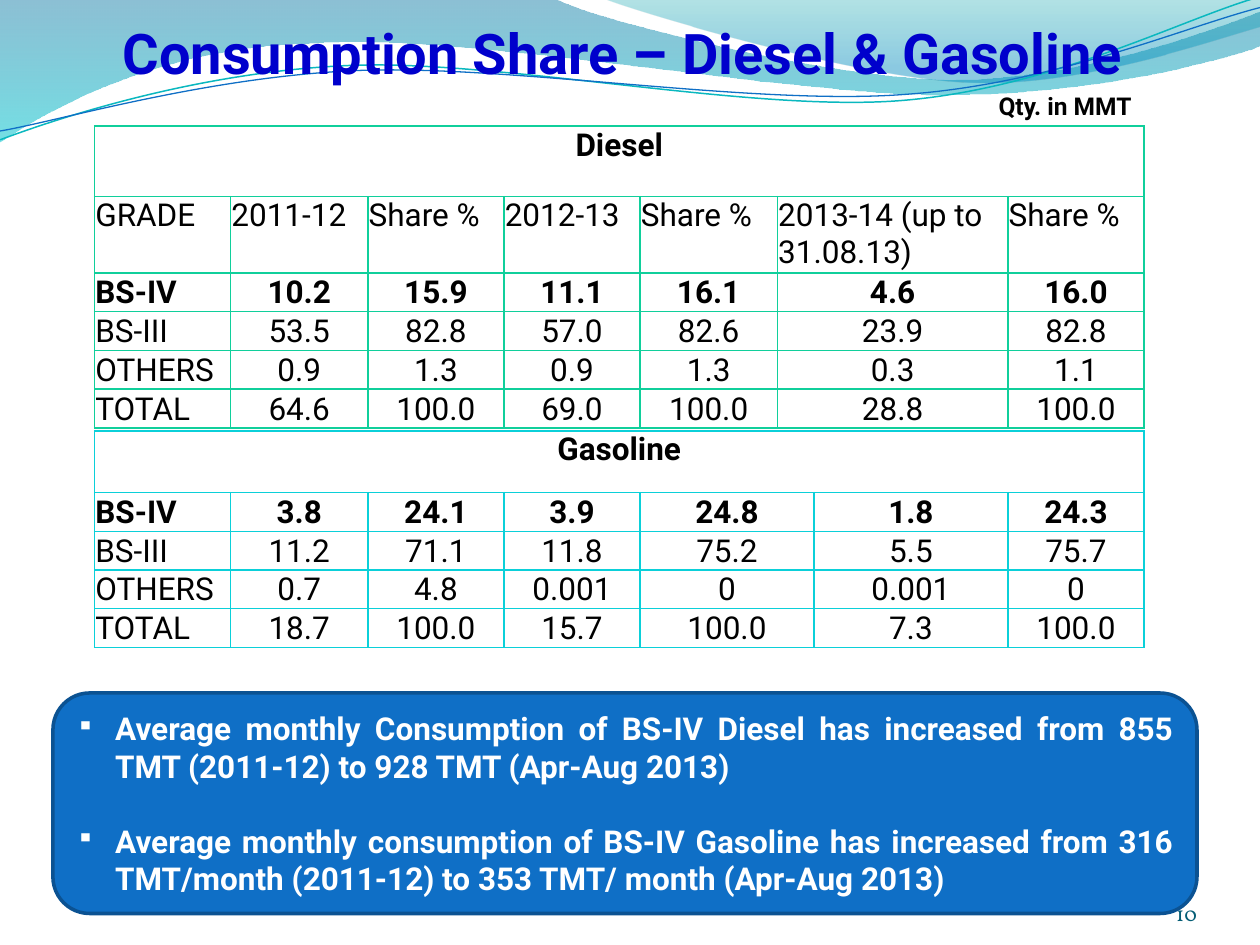
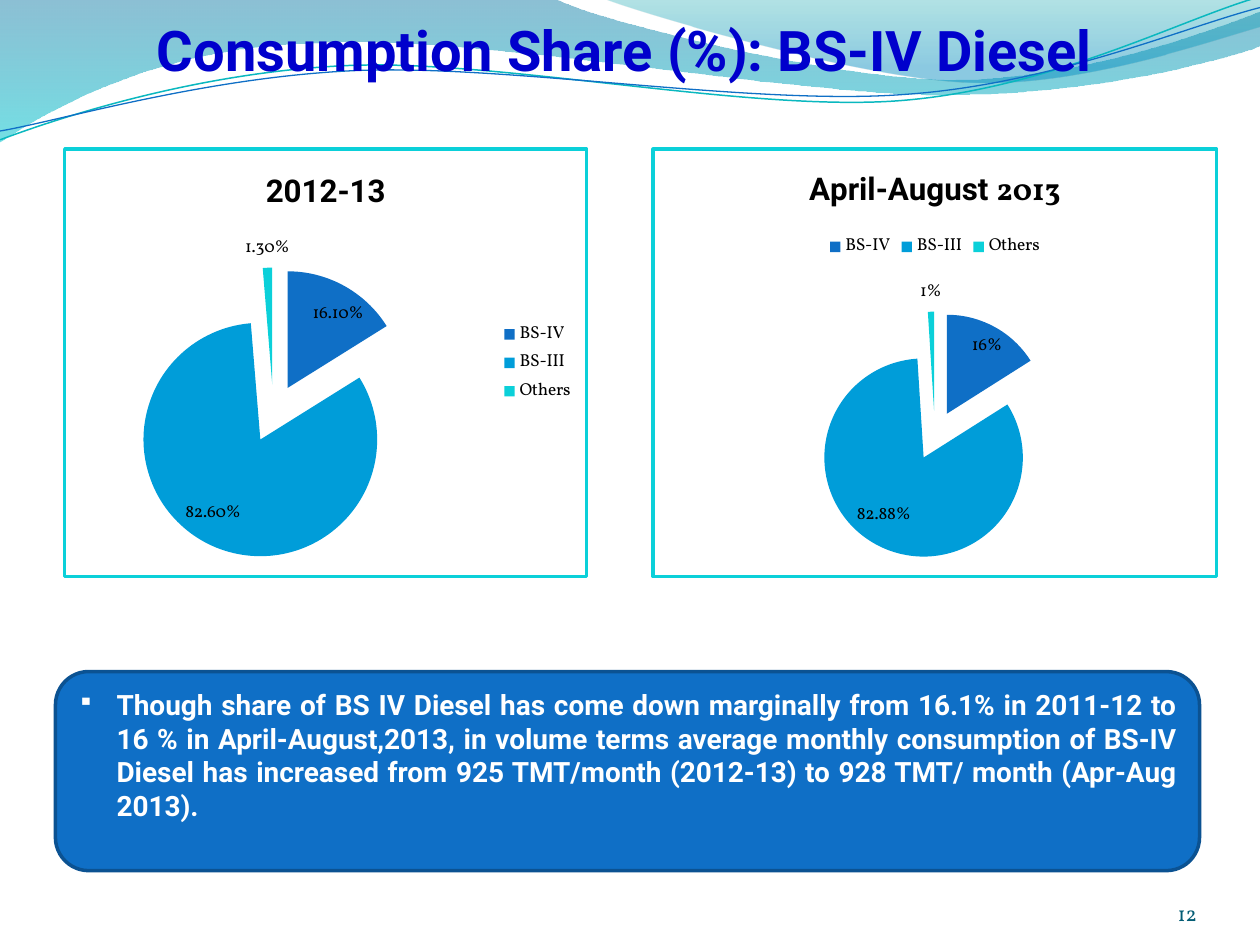
import math
from dataclasses import dataclass
from itertools import pairwise
from typing import Any, Optional

import pptx
import pptx.chart.data
import pptx.dml.color
import pptx.enum.chart
import pptx.enum.shapes
import pptx.enum.text
import pptx.oxml
import pptx.oxml.ns
import pptx.util

PX = 9144  # 100 px to the inch

qn = pptx.oxml.ns.qn
Align = pptx.enum.text.PP_ALIGN
Anchor = pptx.enum.text.MSO_ANCHOR
LegendAt = pptx.enum.chart.XL_LEGEND_POSITION


@dataclass(frozen=True)
class Theme:
    body_font: str = "Roboto"
    serif_font: str = "Vollkorn"
    black: str = "000000"
    white: str = "FFFFFF"
    title: str = "0000CC"
    panel: str = "0F6FC6"
    panel_edge: str = "0B5292"
    page_number: str = "045D75"
    diesel_grid: str = "10CF9B"
    aqua: str = "0BD0D9"
    pie: tuple[str, ...] = ("0F6FC6", "009DD9", "0BD0D9")
    title_size: int = 32
    body_size: int = 18
    compact_size: int = 16
    unit_size: int = 14
    page_size: int = 12
    chart_size: int = 10


THEME = Theme()


@dataclass(frozen=True)
class Box:
    left: int
    top: int
    width: int
    height: int

    def emu(self) -> tuple[int, int, int, int]:
        return self.left * PX, self.top * PX, self.width * PX, self.height * PX


@dataclass(frozen=True)
class Wave:
    """Outline of 2-number straight and 6-number Bézier segments, filled or stroked."""
    start: tuple[int, int]
    segments: tuple[tuple[int, ...], ...]
    stops: tuple[tuple[float, str, int], ...] = ()  # position, colour, opacity %
    stroke: str = ""
    stroke_width: float = 0
    tilt: float = 0  # degrees, undone in the outline so that it lands in place


@dataclass(frozen=True)
class GradeTable:
    fuel: str
    top: int
    edges: tuple[int, ...]
    row_heights: tuple[int, ...]
    grid: str
    rows: tuple[str, ...]
    headings: tuple[str, ...] = ()


@dataclass(frozen=True)
class SharePie:
    box: Box
    title: tuple[tuple[str, str], ...]  # text, font
    shares: tuple[float, ...]
    legend: Any
    label_format: str
    bs3_label: Optional[str] = None


WAVES = (
    Wave((0, 0), ((440, -1), (476, 17, 664, 63, 758, 63), (853, 63, 958, 26, 1000, 9),
                  (1001, 36), (983, 44, 870, 76, 746, 75), (622, 75, 382, 28, 257, 34),
                  (129, 36, 46, 83, -1, 113), (0, 0)),
         stops=((0, "0074A1", 45), (1, "00C6CF", 55))),
    Wave((479, -1), ((509, 11, 682, 62, 769, 65), (856, 69, 961, 32, 1000, 21), (1000, 0),
                     (479, -1)),
         stops=((0, "00A1A9", 30), (0.8, "008BBF", 45))),
    Wave((0, 111), ((48, 93, 158, 57, 277, 52), (395, 47, 593, 89, 713, 80),
                    (833, 71, 938, 15, 998, -2)),
         stroke="0AB8BF", stroke_width=0.85, tilt=-2.7),
    Wave((0, 104), ((47, 96, 164, 61, 283, 56), (403, 51, 597, 84, 717, 75),
                    (836, 67, 941, 21, 1000, 6)),
         stroke="0F6FC6", stroke_width=0.75, tilt=-2.7),
)
WAVE_PIVOT = (499, 58)

DIESEL = GradeTable(
    "Diesel", 100, (75, 183, 292, 400, 508, 617, 800, 908), (56, 56, 28, 28, 28, 28),
    THEME.diesel_grid,
    ("BS-IV 10.2 15.9 11.1 16.1 4.6 16.0",
     "BS-III 53.5 82.8 57.0 82.6 23.9 82.8",
     "OTHERS 0.9 1.3 0.9 1.3 0.3 1.1",
     "TOTAL 64.6 100.0 69.0 100.0 28.8 100.0"),
    ("GRADE", "2011-12", "Share %", "2012-13", "Share %", "2013-14 (up to 31.08.13)",
     "Share %"))
GASOLINE = GradeTable(
    "Gasoline", 342, (75, 183, 292, 400, 508, 646, 800, 908), (49, 25, 25, 25, 25),
    THEME.aqua,
    ("BS-IV 3.8 24.1 3.9 24.8 1.8 24.3",
     "BS-III 11.2 71.1 11.8 75.2 5.5 75.7",
     "OTHERS 0.7 4.8 0.001 0 0.001 0",
     "TOTAL 18.7 100.0 15.7 100.0 7.3 100.0"))

PIES = (
    SharePie(Box(50, 117, 417, 342), (("2012-13", THEME.body_font),),
             (16.1, 82.6, 1.3), LegendAt.RIGHT, "0.00%"),
    SharePie(Box(517, 117, 450, 342),
             (("April-August ", THEME.body_font), ("2013", THEME.serif_font)),
             (16, 83, 1), LegendAt.TOP, "0%", bs3_label="82.88%"),
)


def rgb(colour: str) -> pptx.dml.color.RGBColor:
    return pptx.dml.color.RGBColor.from_string(colour)


def set_font(font: Any, size: int, colour: str, bold: bool = False,
             face: str = THEME.body_font) -> None:
    font.name, font.size, font.bold = face, pptx.util.Pt(size), bold
    font.color.rgb = rgb(colour)


def set_margins(holder: Any, left: int, top: int, right: int, bottom: int) -> None:
    holder.margin_left, holder.margin_top = left * PX, top * PX
    holder.margin_right, holder.margin_bottom = right * PX, bottom * PX


def untilted(x: int, y: int, tilt: float) -> tuple[int, int]:
    """Turn a point back around the pivot of the waves; the result is in EMU."""
    angle = math.radians(-tilt)
    dx, dy = x - WAVE_PIVOT[0], y - WAVE_PIVOT[1]
    return (round((WAVE_PIVOT[0] + dx * math.cos(angle) - dy * math.sin(angle)) * PX),
            round((WAVE_PIVOT[1] + dx * math.sin(angle) + dy * math.cos(angle)) * PX))


def draw_wave(slide: Any, wave: Wave) -> None:
    builder = slide.shapes.build_freeform(*untilted(*wave.start, wave.tilt), scale=1.0)
    segments = [[untilted(x, y, wave.tilt) for x, y in zip(segment[::2], segment[1::2])]
                for segment in wave.segments]
    builder.add_line_segments([points[-1] for points in segments], close=bool(wave.stops))
    shape = builder.convert_to_shape()
    for side, points in zip(list(shape.element.iter(qn("a:lnTo"))), segments):
        if len(points) == 3:
            controls = "".join(f'<a:pt x="{x - shape.left}" y="{y - shape.top}"/>'
                               for x, y in points)
            side.getparent().replace(side, pptx.oxml.parse_xml(
                f'<a:cubicBezTo {pptx.oxml.ns.nsdecls("a")}>{controls}</a:cubicBezTo>'))
    shape.rotation = wave.tilt
    shape.shadow.inherit = False
    if not wave.stops:
        shape.fill.background()
        shape.line.color.rgb = rgb(wave.stroke)
        shape.line.width = pptx.util.Pt(wave.stroke_width)
        return
    shape.line.fill.background()
    shape.fill.gradient()
    shape.fill.gradient_angle = 270
    for stop, (position, colour, _) in zip(shape.fill.gradient_stops, wave.stops):
        stop.position, stop.color.rgb = position, rgb(colour)
    tints = shape.element.spPr.iter(qn("a:srgbClr"))
    for tint, (_, _, opacity) in zip(tints, wave.stops):
        tint.append(pptx.oxml.parse_xml(
            f'<a:alpha {pptx.oxml.ns.nsdecls("a")} val="{opacity * 1000}"/>'))


def add_text(slide: Any, box: Box, text: str, align: Any, anchor: Any,
             margins: tuple[int, int, int, int]) -> Any:
    """Add a one-paragraph text box and return its font."""
    frame = slide.shapes.add_textbox(*box.emu()).text_frame
    frame.word_wrap, frame.vertical_anchor = True, anchor
    set_margins(frame, *margins)
    paragraph = frame.paragraphs[0]
    paragraph.text, paragraph.alignment = text, align
    return paragraph.font


def start_slide(deck: Any, title: str, title_box: Box, page: int) -> Any:
    slide = deck.slides.add_slide(deck.slide_layouts[6])
    for wave in WAVES:
        draw_wave(slide, wave)
    set_font(add_text(slide, title_box, title, Align.CENTER, Anchor.BOTTOM, (0, 5, 0, 0)),
             THEME.title_size, THEME.title, bold=True)
    set_font(add_text(slide, Box(867, 695, 83, 40), str(page), Align.RIGHT, Anchor.BOTTOM,
                      (0, 0, 0, 0)),
             THEME.page_size, THEME.page_number, face=THEME.serif_font)
    return slide


def add_findings(slide: Any, box: Box, findings: tuple[str, ...], size: int,
                 bottom_margin: int = 5) -> None:
    panel = slide.shapes.add_shape(
        pptx.enum.shapes.MSO_SHAPE.ROUNDED_RECTANGLE, *box.emu())
    panel.shadow.inherit = False
    panel.fill.solid()
    panel.fill.fore_color.rgb = rgb(THEME.panel)
    panel.line.color.rgb = rgb(THEME.panel_edge)
    panel.line.width = pptx.util.Pt(2)
    frame = panel.text_frame
    frame.word_wrap, frame.vertical_anchor = True, Anchor.MIDDLE
    set_margins(frame, 10, 5, 10, bottom_margin)
    namespace = pptx.oxml.ns.nsdecls("a")
    for index, finding in enumerate(findings):
        paragraph = frame.add_paragraph() if index else frame.paragraphs[0]
        paragraph.text, paragraph.alignment = finding, Align.JUSTIFY
        set_font(paragraph.font, size, THEME.white, bold=True)
        if index:
            paragraph.space_before = pptx.util.Pt(21)
        properties = paragraph._p.get_or_add_pPr()
        properties.set("marL", str(31 * PX))
        properties.set("indent", str(-31 * PX))
        for bullet in (f'<a:buSzPct {namespace} val="80000"/>',
                       f'<a:buChar {namespace} char="▪"/>'):
            properties.find(qn("a:defRPr")).addprevious(pptx.oxml.parse_xml(bullet))


def set_borders(cell: Any, colour: str) -> None:
    properties = cell._tc.get_or_add_tcPr()
    for index, side in enumerate("LRTB"):
        properties.insert(index, pptx.oxml.parse_xml(
            f'<a:ln{side} {pptx.oxml.ns.nsdecls("a")} w="12700"><a:solidFill>'
            f'<a:srgbClr val="{colour}"/></a:solidFill></a:ln{side}>'))


def add_grade_table(slide: Any, grades: GradeTable) -> None:
    columns = len(grades.edges) - 1
    heading_rows = [(grades.fuel,) + ("",) * (columns - 1)]
    if grades.headings:
        heading_rows.append(grades.headings)
    rows = heading_rows + [row.split() for row in grades.rows]
    box = Box(grades.edges[0], grades.top,
              grades.edges[-1] - grades.edges[0], sum(grades.row_heights))
    table = slide.shapes.add_table(len(rows), columns, *box.emu()).table
    table.first_row = table.horz_banding = False
    for column, (left, right) in zip(table.columns, pairwise(grades.edges)):
        column.width = (right - left) * PX
    for row, height in zip(table.rows, grades.row_heights):
        row.height = height * PX
    table.cell(0, 0).merge(table.cell(0, columns - 1))
    for r, row in enumerate(rows):
        is_data = r >= len(heading_rows)
        for c, text in enumerate(row):
            cell = table.cell(r, c)
            cell.fill.background()
            set_borders(cell, grades.grid)
            cell.margin_left = cell.margin_top = cell.margin_right = pptx.util.Pt(0.5)
            cell.margin_bottom = 0
            cell.vertical_anchor = Anchor.BOTTOM if is_data else Anchor.TOP
            paragraph = cell.text_frame.paragraphs[0]
            paragraph.text = text
            centred = r == 0 or (is_data and c > 0)
            paragraph.alignment = Align.CENTER if centred else Align.LEFT
            set_font(paragraph.font, THEME.body_size, THEME.black,
                     bold=r == 0 or row[0] == "BS-IV")


def add_share_pie(slide: Any, pie: SharePie) -> None:
    data = pptx.chart.data.CategoryChartData()
    data.categories = ("BS-IV", "BS-III", "Others")
    data.add_series("".join(text for text, _ in pie.title), pie.shares)
    chart = slide.shapes.add_chart(
        pptx.enum.chart.XL_CHART_TYPE.PIE, *pie.box.emu(), data).chart
    set_font(chart.font, THEME.chart_size, THEME.black, face=THEME.serif_font)
    for text, face in pie.title:
        run = chart.chart_title.text_frame.paragraphs[0].add_run()
        run.text = text
        set_font(run.font, THEME.body_size, THEME.black, bold=True, face=face)
    chart.has_legend = True
    chart.legend.position, chart.legend.include_in_layout = pie.legend, False

    plot = chart.plots[0]
    plot.vary_by_categories = True
    series = plot.series[0]
    for index, colour in enumerate(THEME.pie):
        fill = series.points[index].format.fill
        fill.solid()
        fill.fore_color.rgb = rgb(colour)
    best_fit = pptx.enum.chart.XL_LABEL_POSITION.BEST_FIT
    labels = series.data_labels
    labels.show_percentage, labels.show_value = True, False
    labels.number_format, labels.number_format_is_linked = pie.label_format, False
    labels.position = best_fit
    if pie.bs3_label:
        label = series.points[1].data_label
        run = label.text_frame.paragraphs[0].add_run()
        run.text = pie.bs3_label
        set_font(run.font, THEME.chart_size, THEME.black, face=THEME.serif_font)
        label.position = best_fit
        flags = chart.element.find(".//" + qn("c:dLbl"))
        flags.find(qn("c:showVal")).set("val", "0")
        flags.find(qn("c:showPercent")).set("val", "1")

    chart.element.find(".//" + qn("c:dPt")).addprevious(pptx.oxml.parse_xml(
        f'<c:explosion {pptx.oxml.ns.nsdecls("c")} val="25"/>'))
    chart.element.find(qn("c:chart")).addnext(pptx.oxml.parse_xml(
        f'<c:spPr {pptx.oxml.ns.nsdecls("c", "a")}>'
        f'<a:solidFill><a:srgbClr val="{THEME.white}"/></a:solidFill>'
        f'<a:ln w="25400"><a:solidFill><a:srgbClr val="{THEME.aqua}"/></a:solidFill></a:ln>'
        '</c:spPr>'))


def main() -> None:
    deck = pptx.Presentation()
    deck.slide_width, deck.slide_height = 1000 * PX, 750 * PX

    volumes = start_slide(deck, "Consumption Share – Diesel & Gasoline ",
                          Box(50, -17, 900, 85), 10)
    add_findings(volumes, Box(42, 550, 908, 175), (
        "Average monthly Consumption of BS-IV Diesel has increased from 855 TMT (2011-12) "
        "to 928 TMT (Apr-Aug 2013)",
        "Average monthly consumption of BS-IV Gasoline has increased from 316 TMT/month "
        "(2011-12) to 353 TMT/ month (Apr-Aug 2013)"), THEME.body_size)
    for grades in (DIESEL, GASOLINE):
        add_grade_table(volumes, grades)
    set_font(add_text(volumes, Box(750, 67, 158, 33), "Qty. in MMT", Align.RIGHT,
                      Anchor.TOP, (10, 5, 10, 5)), THEME.unit_size, THEME.black, bold=True)

    shares = start_slide(deck, "Consumption Share (%): BS-IV Diesel",
                         Box(25, 8, 942, 58), 12)
    for pie in PIES:
        add_share_pie(shares, pie)
    add_findings(shares, Box(44, 533, 908, 158), (
        "Though share of BS IV Diesel has come down marginally from 16.1% in 2011-12 to "
        "16 % in April-August,2013, in volume terms average monthly consumption of BS-IV "
        "Diesel has increased from 925 TMT/month (2012-13) to 928 TMT/ month (Apr-Aug "
        "2013).",), THEME.compact_size, bottom_margin=31)

    deck.save("out.pptx")


if __name__ == "__main__":
    main()
